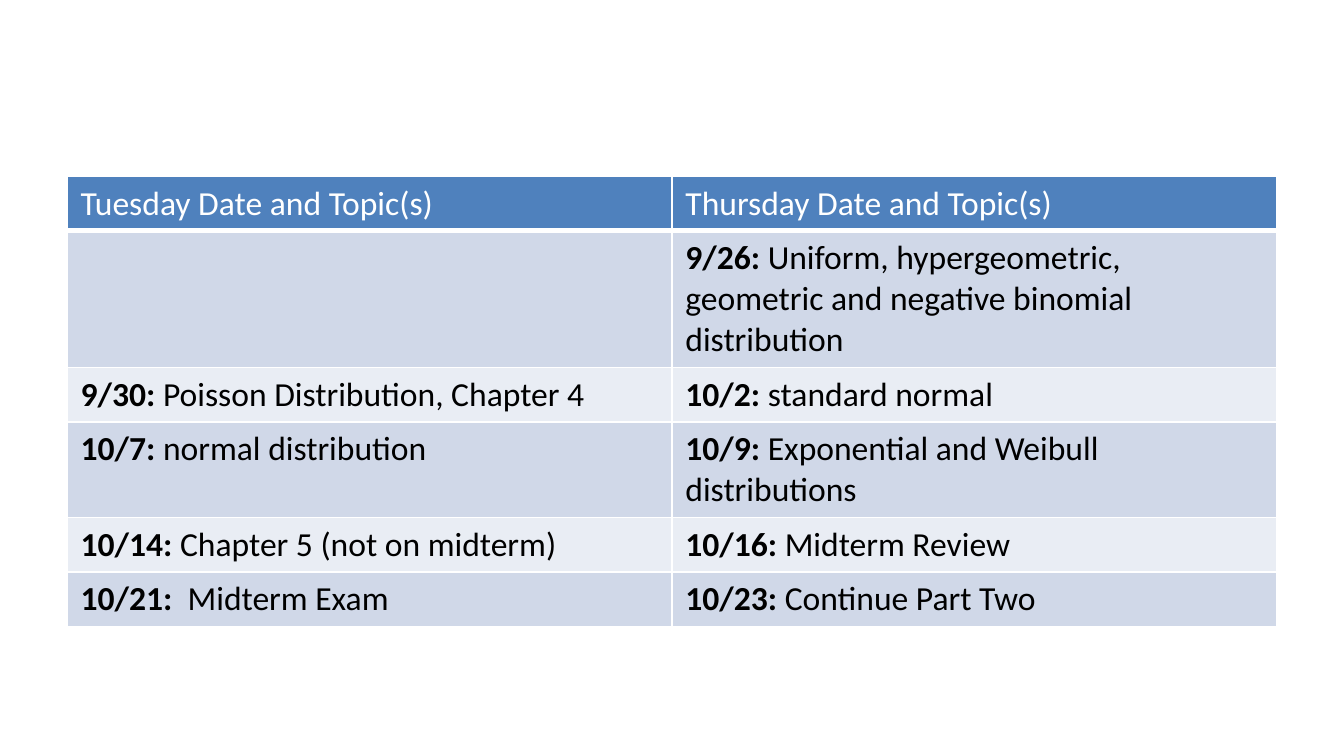
from dataclasses import dataclass

from lxml.etree import SubElement
from pptx import Presentation
from pptx.dml.color import RGBColor
from pptx.oxml.ns import qn
from pptx.util import Pt


@dataclass(frozen=True)
class Theme:
    font: str = "Calibri"
    size: int = 18
    header_fill: str = "4F81BD"
    band_fills: tuple = ("D0D8E8", "E9EDF4")
    header_text: str = "FFFFFF"
    body_text: str = "000000"
    border: str = "FFFFFF"
    border_width: int = 1
    header_rule_width: int = 3


HEADERS = ("Tuesday Date and Topic(s)", "Thursday Date and Topic(s)")
SCHEDULE = (
    (None, ("9/26:", " Uniform, hypergeometric, geometric and negative binomial distribution")),
    (("9/30:", " Poisson Distribution, Chapter 4"), ("10/2:", " standard normal")),
    (("10/7:", " normal distribution"), ("10/9:", " Exponential and Weibull distributions")),
    (("10/14:", " Chapter 5 (not on midterm)"), ("10/16:", " Midterm Review")),
    (("10/21: ", " Midterm Exam"), ("10/23:", " Continue Part Two")),
)
LINES_PER_ROW = (1, 3, 1, 2, 1, 1)
LINE_HEIGHT = 22
CELL_PADDING = 7.2


class SlideBuilder:
    """Holds the theme and the current slide, and adds elements to it."""

    def __init__(self, slide, theme):
        self.slide = slide
        self.theme = theme

    def add_run(self, paragraph, text, color, bold=False):
        run = paragraph.add_run()
        run.text = text
        font_format = {"name": self.theme.font, "size": Pt(self.theme.size), "bold": bold}
        for name, value in font_format.items():
            setattr(run.font, name, value)
        run.font.color.rgb = RGBColor.from_string(color)

    def add_borders(self, cell, bottom_width):
        properties = cell._tc.get_or_add_tcPr()
        width = self.theme.border_width
        widths = {"a:lnL": width, "a:lnR": width, "a:lnT": width, "a:lnB": bottom_width}
        for tag, points in widths.items():
            line = SubElement(properties, qn(tag), w=str(Pt(points)))
            fill = SubElement(line, qn("a:solidFill"))
            SubElement(fill, qn("a:srgbClr"), val=self.theme.border)

    def fill_cell(self, cell, runs, fill, color, bottom_width):
        self.add_borders(cell, bottom_width)
        cell.fill.solid()
        cell.fill.fore_color.rgb = RGBColor.from_string(fill)
        paragraph = cell.text_frame.paragraphs[0]
        paragraph.font.size = Pt(self.theme.size)
        for text, bold in runs:
            self.add_run(paragraph, text, color, bold)

    def add_schedule(self, left, top, width, headers, schedule):
        theme = self.theme
        heights = [Pt(lines * LINE_HEIGHT + CELL_PADDING) for lines in LINES_PER_ROW]
        frame = self.slide.shapes.add_table(
            len(heights), len(headers), Pt(left), Pt(top), Pt(width), sum(heights)
        )
        table = frame.table
        for row, height in zip(table.rows, heights):
            row.height = height
        for column, header in enumerate(headers):
            self.fill_cell(table.cell(0, column), [(header, False)], theme.header_fill,
                           theme.header_text, theme.header_rule_width)
        for index, week in enumerate(schedule):
            fill = theme.band_fills[index % len(theme.band_fills)]
            for column, entry in enumerate(week):
                runs = zip(entry, (True, False)) if entry else ()
                self.fill_cell(table.cell(index + 1, column), runs, fill,
                               theme.body_text, theme.border_width)


def main():
    presentation = Presentation()
    presentation.slide_width = Pt(720)
    presentation.slide_height = Pt(405)
    slide = presentation.slides.add_slide(presentation.slide_layouts[6])
    builder = SlideBuilder(slide, Theme())
    builder.add_schedule(36, 94.5, 648, HEADERS, SCHEDULE)
    presentation.save("out.pptx")


if __name__ == "__main__":
    main()
